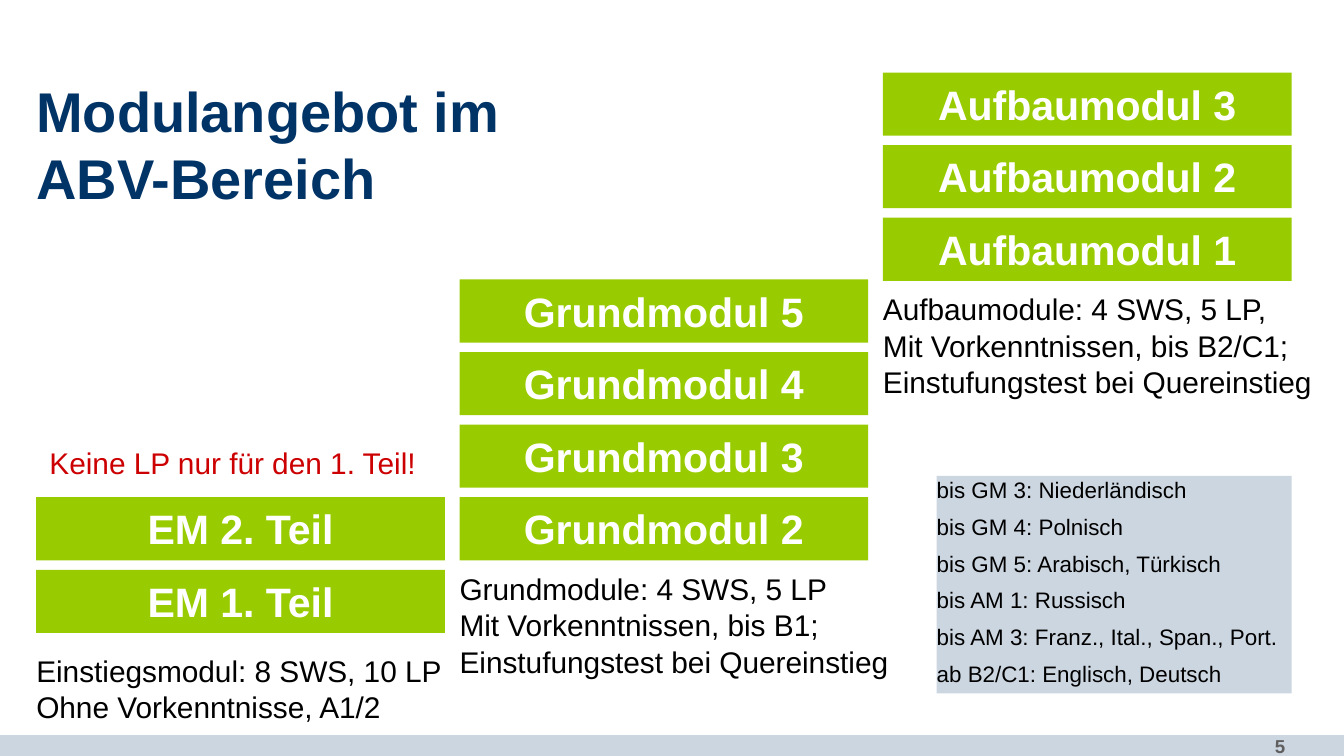
from pptx import Presentation
from pptx.dml.color import RGBColor
from pptx.enum.shapes import MSO_SHAPE
from pptx.enum.text import MSO_ANCHOR, PP_ALIGN
from pptx.util import Inches, Pt

NAVY = RGBColor(0x00, 0x33, 0x66)
GREEN = RGBColor(0x99, 0xCC, 0x00)
PALE_BLUE = RGBColor(0xCC, 0xD6, 0xE0)
RED = RGBColor(0xCC, 0x00, 0x00)
GRAY = RGBColor(0x5F, 0x5F, 0x5F)
BLACK = RGBColor(0x00, 0x00, 0x00)
WHITE = RGBColor(0xFF, 0xFF, 0xFF)

SLIDE_WIDTH = Inches(10)
SLIDE_HEIGHT = SLIDE_WIDTH * 9 // 16

LEFT = 0.27
COLUMN_STEP = 3.15
MODULE_WIDTH = 3.04
MODULE_HEIGHT = 0.47
MODULE_STEP = 0.54

NO_MARGINS = {"margin_left": 0, "margin_top": 0, "margin_right": 0, "margin_bottom": 0}
TITLE_FONT = {"size": Pt(30), "bold": True}
MODULE_FONT = {"size": Pt(22), "bold": True}
NOTE_FONT = {"size": Pt(16)}
LIST_FONT = {"size": Pt(12)}
NUMBER_FONT = {"size": Pt(10), "bold": True}

MODULE_COLUMNS = [
    (3.7, ["EM 2. Teil", "EM 1. Teil"], 4.85, 3.15, 0.62,
     ["Einstiegsmodul: 8 SWS, 10 LP", "Ohne Vorkenntnisse, A1/2"]),
    (2.08, ["Grundmodul 5", "Grundmodul 4", "Grundmodul 3", "Grundmodul 2"], 4.24, 3.27, 1.15,
     ["Grundmodule: 4 SWS, 5 LP", "Mit Vorkenntnissen, bis B1;",
      "Einstufungstest bei Quereinstieg"]),
    (0.54, ["Aufbaumodul 3", "Aufbaumodul 2", "Aufbaumodul 1"], 2.16, 3.27, 0.98,
     ["Aufbaumodule: 4 SWS, 5 LP,", "Mit Vorkenntnissen, bis B2/C1;",
      "Einstufungstest bei Quereinstieg"]),
]

LANGUAGES = [
    "bis GM 3: Niederländisch",
    "bis GM 4: Polnisch",
    "bis GM 5: Arabisch, Türkisch",
    "bis AM 1: Russisch",
    "bis AM 3: Franz., Ital., Span., Port.",
    "ab B2/C1: Englisch, Deutsch",
]


def apply_format(target, values):
    for name, value in values.items():
        setattr(target, name, value)


def write_lines(shape, lines, font, color, frame=None, alignment=PP_ALIGN.LEFT,
                line_spacing=None, gap=0):
    text_frame = shape.text_frame
    apply_format(text_frame, {"word_wrap": True, "vertical_anchor": MSO_ANCHOR.TOP, **(frame or {})})
    for index, line in enumerate(lines):
        paragraph = text_frame.paragraphs[0] if index == 0 else text_frame.add_paragraph()
        paragraph.text = line
        apply_format(paragraph, {"alignment": alignment, "line_spacing": line_spacing})
        if index and gap:
            paragraph.space_before = Pt(gap)
        apply_format(paragraph.font, {"name": "Arial", **font})
        paragraph.font.color.rgb = color


def add_box(slide, left, top, width, height, color):
    shape = slide.shapes.add_shape(
        MSO_SHAPE.RECTANGLE, Inches(left), Inches(top), Inches(width), Inches(height))
    shape.shadow.inherit = False
    shape.fill.solid()
    shape.fill.fore_color.rgb = color
    shape.line.fill.background()
    return shape


def add_text(slide, left, top, width, height, lines, font, color, **options):
    text_box = slide.shapes.add_textbox(
        Inches(left), Inches(top), Inches(width), Inches(height))
    write_lines(text_box, lines, font, color, **options)


def add_module_column(slide, left, top, modules, note_top, note_width, note_height, note):
    for index, module in enumerate(modules):
        box = add_box(slide, left, top + index * MODULE_STEP, MODULE_WIDTH, MODULE_HEIGHT, GREEN)
        write_lines(box, [module], MODULE_FONT, WHITE, alignment=PP_ALIGN.CENTER)
    add_text(slide, left, note_top, note_width, note_height, note, NOTE_FONT, BLACK,
             frame=NO_MARGINS, line_spacing=1.02)


def main():
    presentation = Presentation()
    apply_format(presentation, {"slide_width": SLIDE_WIDTH, "slide_height": SLIDE_HEIGHT})
    slide = presentation.slides.add_slide(presentation.slide_layouts[6])

    add_box(slide, 0, 5.47, 10, 0.16, PALE_BLUE)
    add_text(slide, 8.32, 5.42, 1.34, 0.2, ["5"], NUMBER_FONT, GRAY, alignment=PP_ALIGN.RIGHT)
    add_text(slide, LEFT, 0.59, 9.45, 0.98, ["Modulangebot im\vABV-Bereich"], TITLE_FONT, NAVY,
             frame={**NO_MARGINS, "vertical_anchor": MSO_ANCHOR.BOTTOM})

    for index, column in enumerate(MODULE_COLUMNS):
        add_module_column(slide, LEFT + index * COLUMN_STEP, *column)

    add_text(slide, LEFT, 3.26, MODULE_WIDTH, 0.37, ["Keine LP nur für den 1. Teil!"],
             NOTE_FONT, RED)
    language_box = add_box(slide, 6.97, 3.54, 2.64, 1.62, PALE_BLUE)
    write_lines(language_box, LANGUAGES, LIST_FONT, BLACK, frame=NO_MARGINS,
                line_spacing=1.02, gap=5)

    presentation.save("out.pptx")


if __name__ == "__main__":
    main()
